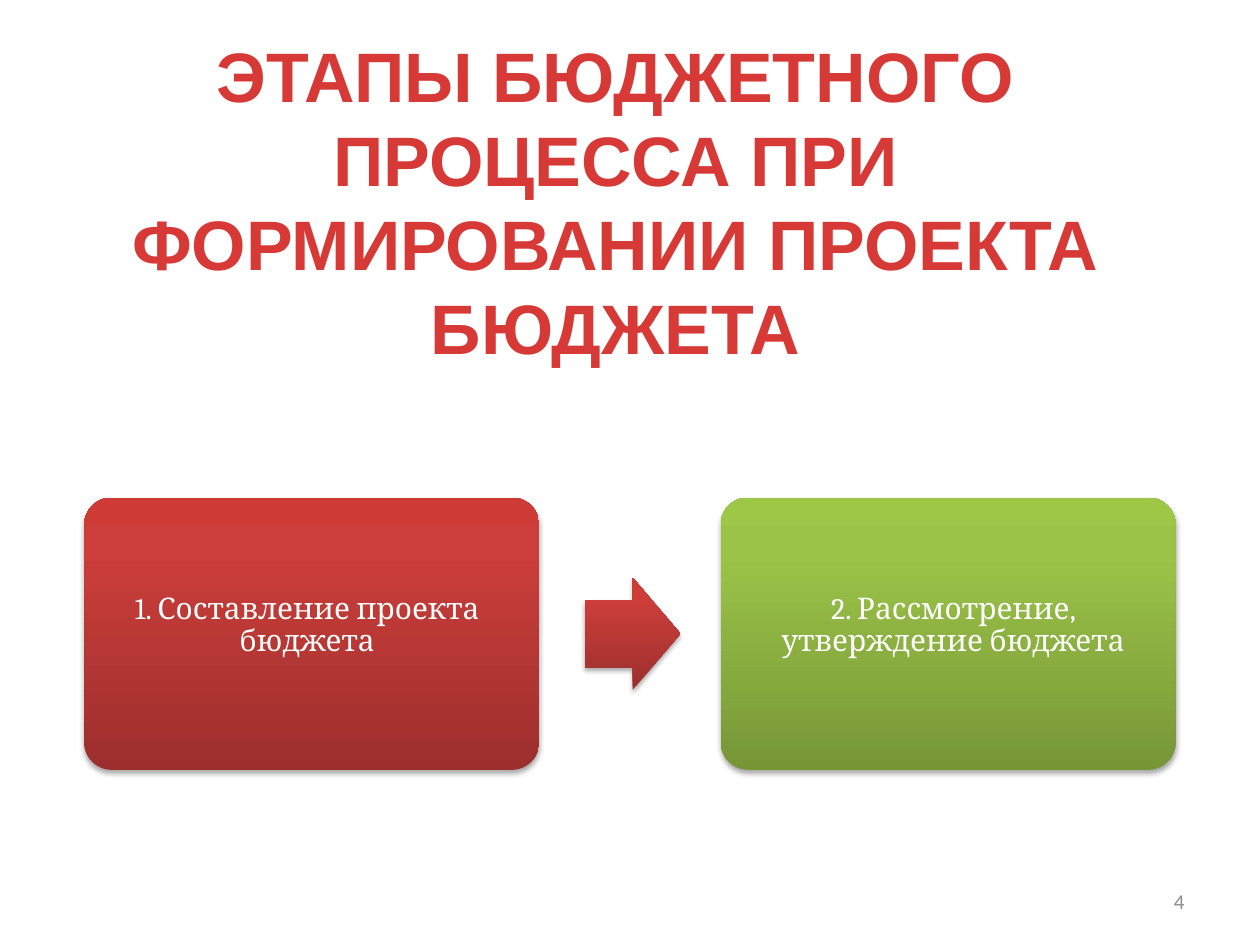
from dataclasses import dataclass

from lxml.etree import SubElement
from pptx import Presentation
from pptx.dml.color import RGBColor
from pptx.enum.shapes import MSO_SHAPE
from pptx.enum.text import MSO_ANCHOR, PP_ALIGN
from pptx.oxml.ns import qn
from pptx.util import Cm, Pt

COLORS = {
    "title": "D73A36",
    "number": "8C8C8C",
    "white": "FFFFFF",
    "shadow": "000000",
}
GRADIENTS = {
    "red": {0: "9C2F2D", 80: "CB3E3A", 100: "CE3B37"},
    "green": {0: "779737", 80: "9BC348", 100: "9DC746"},
}
STAGE_TOP, STAGE_WIDTH, STAGE_HEIGHT = 10.03, 9.17, 5.49
ARROW_WIDTH, ARROW_HEIGHT = 1.93, 2.26


@dataclass
class Box:
    left: float
    top: float
    width: float
    height: float

    def lengths(self) -> tuple:
        return Cm(self.left), Cm(self.top), Cm(self.width), Cm(self.height)


@dataclass
class TextStyle:
    font: str
    size: float
    color: str
    align: PP_ALIGN
    bold: bool = False


@dataclass
class Stage:
    text: str
    left: float
    gradient: str
    margin_left: float
    margin_right: float


STAGES = [
    Stage("1. Составление проекта бюджета", 1.7, "red", 0, 0.18),
    Stage("2. Рассмотрение, утверждение бюджета", 14.53, "green", 0.2, 0),
]
TITLE_STYLE = TextStyle("Arial", 40, "title", PP_ALIGN.CENTER, bold=True)
STAGE_STYLE = TextStyle("Cambria", 17, "white", PP_ALIGN.CENTER)
NUMBER_STYLE = TextStyle("Calibri", 12, "number", PP_ALIGN.RIGHT)


def write_text(shape, text: str, style: TextStyle, anchor: MSO_ANCHOR):
    frame = shape.text_frame
    frame.word_wrap = True
    frame.vertical_anchor = anchor
    paragraph = frame.paragraphs[0]
    paragraph.alignment = style.align
    run = paragraph.add_run()
    run.text = text
    run.font.name = style.font
    run.font.size = Pt(style.size)
    run.font.bold = style.bold
    run.font.color.rgb = RGBColor.from_string(COLORS[style.color])
    return paragraph


def add_text(slide, box: Box, text: str, style: TextStyle, anchor: MSO_ANCHOR) -> None:
    write_text(slide.shapes.add_textbox(*box.lengths()), text, style, anchor)


def fill_gradient(shape, stops: dict[int, str]) -> None:
    """Fill from bottom to top; stops map a percentage to a colour."""
    shape.fill.gradient()
    shape.fill.gradient_angle = 90
    stop_list = shape._element.spPr.find(".//" + qn("a:gsLst"))
    for old_stop in list(stop_list):
        stop_list.remove(old_stop)
    for percent, color in stops.items():
        stop = SubElement(stop_list, qn("a:gs"), pos=str(percent * 1000))
        SubElement(stop, qn("a:srgbClr"), val=color)


def add_shadow(shape) -> None:
    shape.shadow.inherit = False
    effects = shape._element.spPr.find(qn("a:effectLst"))
    shadow = SubElement(
        effects, qn("a:outerShdw"), blurRad=str(Pt(3.1)), dist=str(Pt(1.8)),
        dir="5400000", rotWithShape="0",
    )
    color = SubElement(shadow, qn("a:srgbClr"), val=COLORS["shadow"])
    SubElement(color, qn("a:alpha"), val="35000")


def add_gradient_shape(slide, kind: MSO_SHAPE, box: Box, gradient: str, adjustments: list[float]):
    shape = slide.shapes.add_shape(kind, *box.lengths())
    for index, value in enumerate(adjustments):
        shape.adjustments[index] = value
    shape.line.fill.background()
    fill_gradient(shape, GRADIENTS[gradient])
    add_shadow(shape)
    return shape


def add_stage(slide, stage: Stage) -> None:
    box = Box(stage.left, STAGE_TOP, STAGE_WIDTH, STAGE_HEIGHT)
    shape = add_gradient_shape(slide, MSO_SHAPE.ROUNDED_RECTANGLE, box, stage.gradient, [0.1])
    frame = shape.text_frame
    frame.margin_left, frame.margin_right = Cm(stage.margin_left), Cm(stage.margin_right)
    frame.margin_top, frame.margin_bottom = Cm(0), Cm(0.3)
    paragraph = write_text(shape, stage.text, STAGE_STYLE, MSO_ANCHOR.MIDDLE)
    paragraph.line_spacing = 0.9


def add_arrow(slide) -> None:
    top = STAGE_TOP + (STAGE_HEIGHT - ARROW_HEIGHT) / 2
    box = Box(11.79, top, ARROW_WIDTH, ARROW_HEIGHT)
    add_gradient_shape(slide, MSO_SHAPE.RIGHT_ARROW, box, "red", [0.6, 0.5])


def main() -> None:
    presentation = Presentation()
    presentation.slide_width, presentation.slide_height = Cm(25.4), Cm(19.05)
    slide = presentation.slides.add_slide(presentation.slide_layouts[6])

    add_text(slide, Box(18.21, 17.65, 5.92, 1.02), "4", NUMBER_STYLE, MSO_ANCHOR.MIDDLE)
    for stage in STAGES:
        add_stage(slide, stage)
    add_arrow(slide)
    add_text(
        slide, Box(0.71, 0.53, 23.39, 7.09),
        "ЭТАПЫ БЮДЖЕТНОГО ПРОЦЕССА ПРИ ФОРМИРОВАНИИ ПРОЕКТА БЮДЖЕТА",
        TITLE_STYLE, MSO_ANCHOR.TOP,
    )
    presentation.save("out.pptx")


if __name__ == "__main__":
    main()
